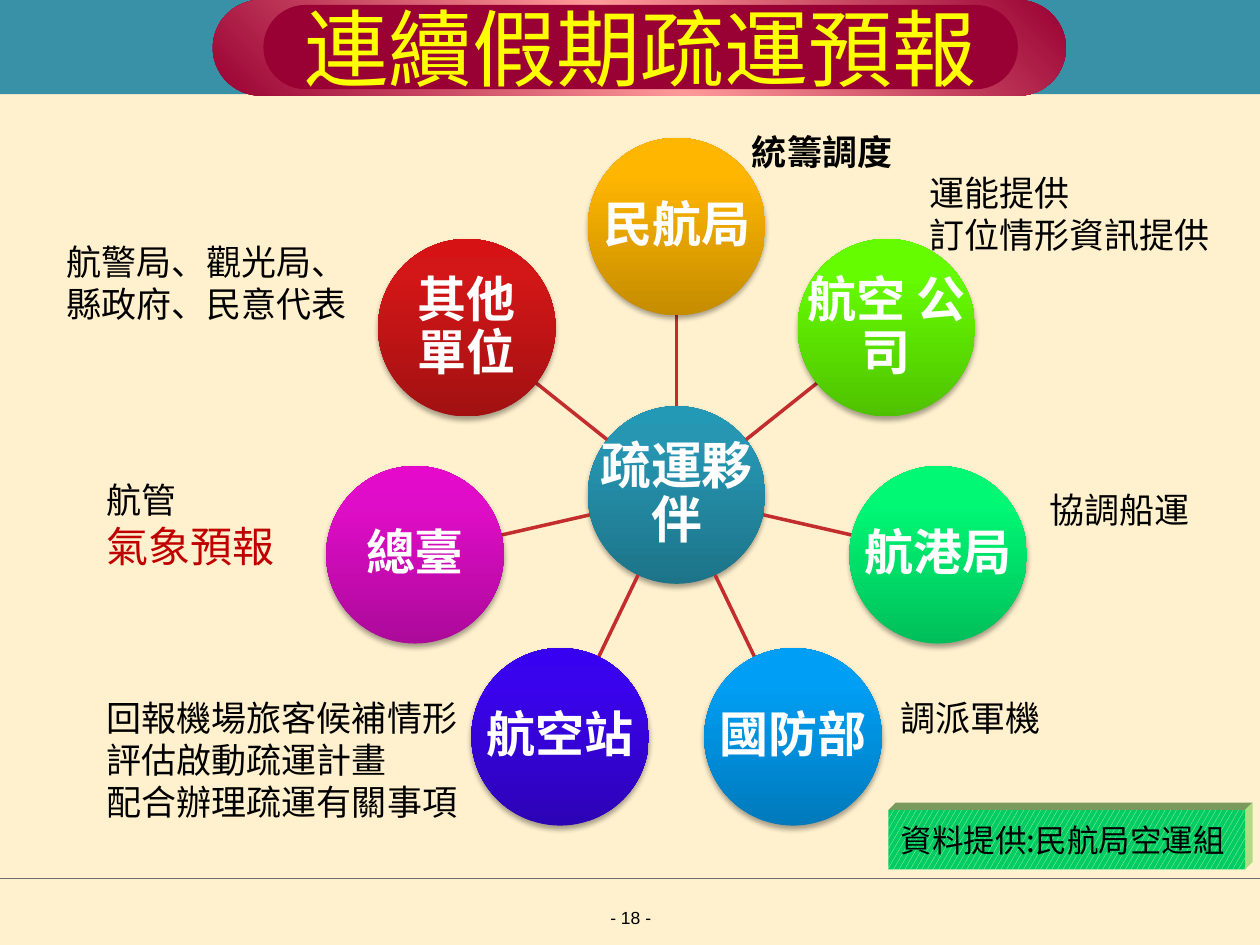
from dataclasses import dataclass
from math import cos, radians, sin

from lxml.etree import SubElement
from pptx import Presentation
from pptx.dml.color import RGBColor
from pptx.enum.dml import MSO_PATTERN_TYPE as Pattern
from pptx.enum.shapes import MSO_CONNECTOR_TYPE as Connector
from pptx.enum.shapes import MSO_SHAPE as Preset
from pptx.enum.text import MSO_ANCHOR as Anchor
from pptx.enum.text import PP_ALIGN as Align
from pptx.oxml.ns import qn
from pptx.util import Cm, Pt


@dataclass(frozen=True)
class Theme:
    background: str = "FFF1CE"
    band: str = "3891A7"
    rule: str = "6E6E6E"
    spoke: str = "C32D2E"
    title_fill: str = "990033"
    title_glow: str = "FF9999"
    title_text: str = "FFFF00"
    text: str = "000000"
    light: str = "FFFFFF"
    alert: str = "C00000"
    credit_light: str = "CCFF99"
    credit_dark: str = "00CC66"
    bevel_top: str = "7A995C"
    bevel_side: str = "B0DC84"
    title_size: float = 48
    hub_size: float = 29
    partner_size: float = 28
    alert_size: float = 24
    note_size: float = 20
    credit_size: float = 18
    page_size: float = 10
    cjk: str = "Noto Sans CJK SC"
    partner_font: str = "Lato"
    page_font: str = "Arial"


@dataclass(frozen=True)
class Partner:
    name: str
    dark: str
    middle: str
    bright: str


@dataclass(frozen=True)
class Line:
    text: str
    bold: bool = False
    alert: bool = False


@dataclass(frozen=True)
class Note:
    left: float
    top: float
    width: float
    height: float
    lines: tuple[Line, ...]
    hanging: bool = True


THEME = Theme()
HUB_X, HUB_Y, ORBIT, DIAMETER = 13.64, 9.98, 5.41, 3.58
HUB = Partner("疏運夥伴", "1D7489", "2696B2", "2499B5")
PARTNERS = (
    Partner("民航局", "C58C00", "FFB601", "FFB602"),
    Partner("航空 公司", "4FC200", "66FC00", "67FD00"),
    Partner("航港局", "00BF5A", "00F875", "00F976"),
    Partner("國防部", "007ABC", "009EF4", "009FF5"),
    Partner("航空站", "2D03B6", "3A03ED", "3800F1"),
    Partner("總臺", "AC0A9A", "E00DC8", "E509CC"),
    Partner("其他\v單位", "A21112", "D31617", "D71214"),
)
NOTES = (
    Note(14.91, 2.51, 4.19, 1.12, (Line("統籌調度", bold=True),)),
    Note(18.49, 3.33, 6.3, 1.96, (Line("運能提供"), Line("訂位情形資訊提供")), hanging=False),
    Note(20.9, 9.73, 3.96, 1.12, (Line("協調船運"),)),
    Note(17.91, 13.92, 3.96, 1.12, (Line("調派軍機"),)),
    Note(1.9, 13.92, 8.2, 2.82,
         (Line("回報機場旅客候補情形"), Line("評估啟動疏運計畫"), Line("配合辦理疏運有關事項"))),
    Note(1.9, 9.53, 4.39, 2.13, (Line("航管"), Line("氣象預報", alert=True))),
    Note(1.09, 4.72, 6.2, 1.96, (Line("航警局、觀光局、縣政府、民意代表"),), hanging=False),
)


def rgb(color: str) -> RGBColor:
    return RGBColor.from_string(color)


def write(paragraph, text: str, *, size: float, color: str = THEME.text, font: str = THEME.cjk,
          bold: bool = False, align=Align.LEFT, spacing: float = 1.0, hanging: bool = False) -> None:
    paragraph.text = text
    paragraph.alignment = align
    paragraph.line_spacing = spacing
    if hanging:
        properties = paragraph._p.get_or_add_pPr()
        properties.set("marL", str(Cm(0.48)))
        properties.set("indent", str(-Cm(0.48)))
    for run in paragraph.runs:
        run.font.size = Pt(size)
        run.font.bold = bold
        run.font.color.rgb = rgb(color)
        run.font.name = font
        SubElement(run._r.get_or_add_rPr(), qn("a:ea"), typeface=font)


def add_text_box(slide, left: float, top: float, width: float, height: float,
                 inset: float | None = None, anchor=Anchor.TOP):
    frame = slide.shapes.add_textbox(Cm(left), Cm(top), Cm(width), Cm(height)).text_frame
    frame.word_wrap = True
    frame.vertical_anchor = anchor
    if inset is not None:
        frame.margin_left = frame.margin_right = Cm(inset)
        frame.margin_top = frame.margin_bottom = Cm(inset)
    return frame


def add_plain_shape(slide, preset, left: float, top: float, width: float, height: float,
                    color: str | None = None):
    shape = slide.shapes.add_shape(preset, Cm(left), Cm(top), Cm(width), Cm(height))
    shape.shadow.inherit = False
    shape.line.fill.background()
    if color:
        shape.fill.solid()
        shape.fill.fore_color.rgb = rgb(color)
    return shape


def set_gradient(shape, stops: tuple[tuple[int, str], ...], angle: int) -> None:
    shape.fill.gradient()
    gradient = shape._element.spPr.find(qn("a:gradFill"))
    stop_list = gradient.find(qn("a:gsLst"))
    for old_stop in list(stop_list):
        stop_list.remove(old_stop)
    for position, color in stops:
        stop = SubElement(stop_list, qn("a:gs"), pos=str(position * 1000))
        SubElement(stop, qn("a:srgbClr"), val=color)
    gradient.find(qn("a:lin")).set("ang", str(angle * 60000))


def add_soft_shadow(shape) -> None:
    effects = shape._element.spPr.find(qn("a:effectLst"))
    shadow = SubElement(effects, qn("a:outerShdw"), blurRad=str(Pt(3.1)), dist=str(Pt(1.8)),
                        dir="5400000", rotWithShape="0")
    color = SubElement(shadow, qn("a:srgbClr"), val=THEME.text)
    SubElement(color, qn("a:alpha"), val="35000")


def add_line(slide, start: tuple[float, float], end: tuple[float, float],
             color: str, width: float) -> None:
    points = [Cm(value) for value in (*start, *end)]
    connector = slide.shapes.add_connector(Connector.STRAIGHT, *points)
    connector.line.color.rgb = rgb(color)
    connector.line.width = Pt(width)
    SubElement(connector._element.spPr, qn("a:effectLst"))


def add_circle(slide, partner: Partner, center: tuple[float, float], size: float, font: str) -> None:
    box = (center[0] - DIAMETER / 2, center[1] - DIAMETER / 2, DIAMETER, DIAMETER)
    circle = add_plain_shape(slide, Preset.OVAL, *box)
    set_gradient(circle, ((0, partner.dark), (80, partner.middle), (100, partner.bright)), 270)
    add_soft_shadow(circle)
    frame = add_text_box(slide, *box, inset=0.05, anchor=Anchor.MIDDLE)
    write(frame.paragraphs[0], partner.name, size=size, color=THEME.light, font=font,
          bold=True, align=Align.CENTER, spacing=0.9)


def on_ray(index: int, distance: float) -> tuple[float, float]:
    angle = radians(360 / len(PARTNERS) * index)
    return HUB_X + distance * sin(angle), HUB_Y - distance * cos(angle)


def add_wheel(slide) -> None:
    add_circle(slide, HUB, (HUB_X, HUB_Y), THEME.hub_size, THEME.cjk)
    for index, partner in enumerate(PARTNERS):
        add_line(slide, on_ray(index, DIAMETER / 2), on_ray(index, ORBIT - DIAMETER / 2),
                 THEME.spoke, 2)
        add_circle(slide, partner, on_ray(index, ORBIT), THEME.partner_size, THEME.partner_font)


def add_note(slide, note: Note) -> None:
    frame = add_text_box(slide, note.left, note.top, note.width, note.height)
    for index, line in enumerate(note.lines):
        paragraph = frame.add_paragraph() if index else frame.paragraphs[0]
        write(paragraph, line.text, bold=line.bold, hanging=note.hanging,
              size=THEME.alert_size if line.alert else THEME.note_size,
              color=THEME.alert if line.alert else THEME.text)


def add_bevel(slide, points: tuple[tuple[float, float], ...], color: str) -> None:
    corners = [(Cm(x), Cm(y)) for x, y in points]
    builder = slide.shapes.build_freeform(*corners[0])
    builder.add_line_segments(corners[1:], close=True)
    bevel = builder.convert_to_shape()
    bevel.shadow.inherit = False
    bevel.fill.solid()
    bevel.fill.fore_color.rgb = rgb(color)
    bevel.line.fill.background()


def add_credit(slide) -> None:
    left, top, width, height, depth = 17.91, 16.33, 7.19, 1.2, 0.15
    right, bottom = left + width, top + height
    add_bevel(slide, ((left, top), (left + depth, top - depth), (right + depth, top - depth),
                      (right, top)), THEME.bevel_top)
    add_bevel(slide, ((right, top), (right + depth, top - depth), (right + depth, bottom - depth),
                      (right, bottom)), THEME.bevel_side)
    credit = add_plain_shape(slide, Preset.RECTANGLE, left, top, width, height)
    credit.fill.patterned()
    credit.fill.pattern = Pattern.LARGE_CONFETTI
    credit.fill.fore_color.rgb = rgb(THEME.credit_light)
    credit.fill.back_color.rgb = rgb(THEME.credit_dark)
    credit.text_frame.word_wrap = False
    credit.text_frame.vertical_anchor = Anchor.MIDDLE
    write(credit.text_frame.paragraphs[0], "資料提供:民航局空運組", size=THEME.credit_size)


def add_title(slide) -> None:
    frame = add_plain_shape(slide, Preset.ROUNDED_RECTANGLE, 4.29, 0, 17.2, 1.93)
    set_gradient(frame, ((0, THEME.title_fill), (50, THEME.title_glow), (100, THEME.title_fill)), 315)
    title = add_plain_shape(slide, Preset.ROUNDED_RECTANGLE, 5.31, 0.1, 15.21, 1.7, THEME.title_fill)
    frame.adjustments[0] = title.adjustments[0] = 0.5
    title.text_frame.word_wrap = False
    title.text_frame.vertical_anchor = Anchor.MIDDLE
    write(title.text_frame.paragraphs[0], "連續假期疏運預報", size=THEME.title_size,
          color=THEME.title_text, align=Align.CENTER)


def main() -> None:
    presentation = Presentation()
    presentation.slide_width, presentation.slide_height = Cm(25.4), Cm(19.05)
    slide = presentation.slides.add_slide(presentation.slide_layouts[6])
    slide.background.fill.solid()
    slide.background.fill.fore_color.rgb = rgb(THEME.background)
    page = add_text_box(slide, 11.38, 18.19, 2.67, 0.61, inset=0, anchor=Anchor.MIDDLE)
    write(page.paragraphs[0], "- 18 -", size=THEME.page_size, font=THEME.page_font, align=Align.CENTER)
    add_plain_shape(slide, Preset.RECTANGLE, 0, 0, 25.4, 1.9, THEME.band)
    add_line(slide, (0, 17.7), (25.4, 17.7), THEME.rule, 0.5)
    add_wheel(slide)
    for note in NOTES:
        add_note(slide, note)
    add_credit(slide)
    add_title(slide)
    presentation.save("out.pptx")


if __name__ == "__main__":
    main()
